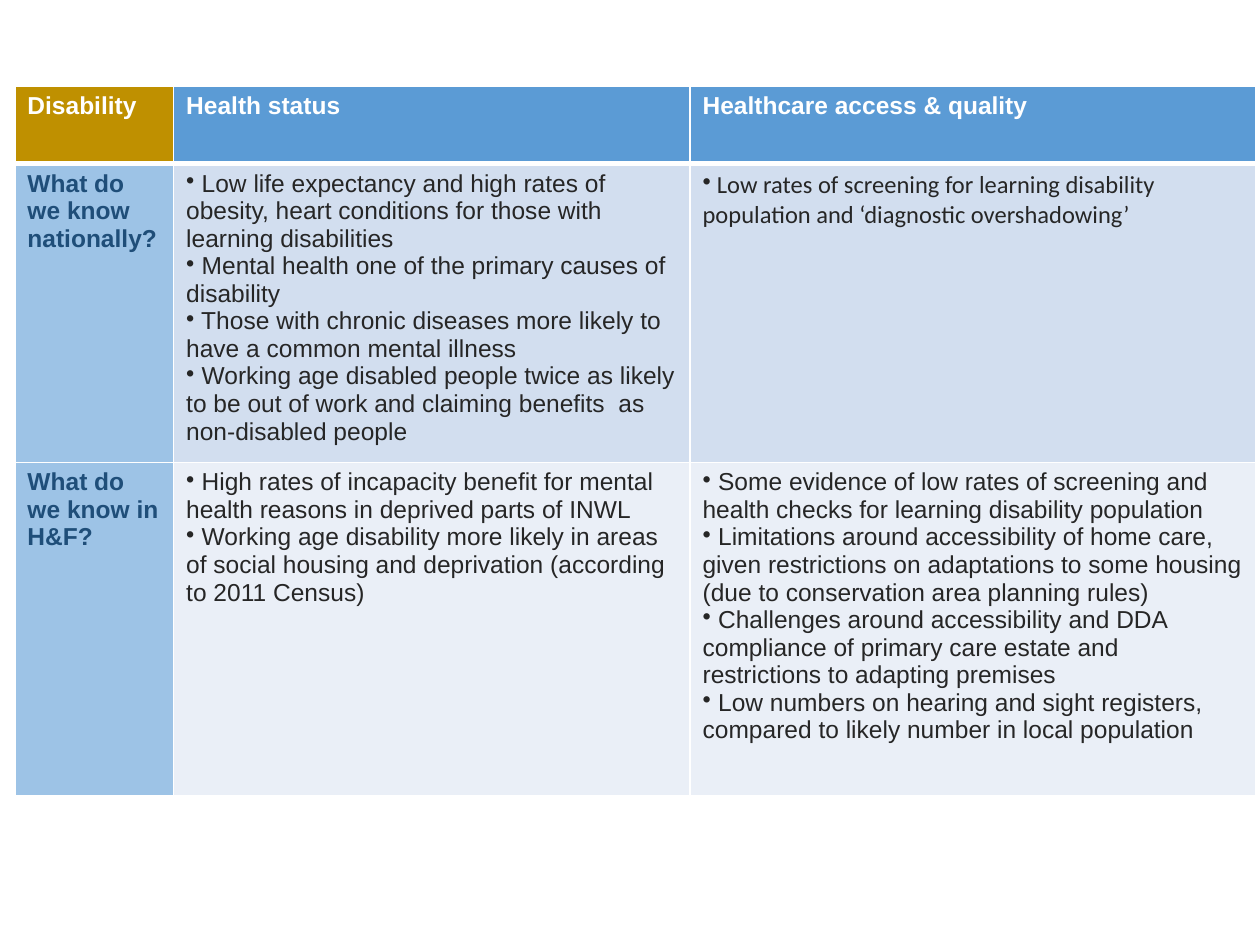
"""Build a slide with a table of what is known about disability and health."""
from dataclasses import dataclass

import lxml.etree
import pptx
import pptx.dml.color
import pptx.oxml.ns
import pptx.table
import pptx.util

Cm = pptx.util.Cm
Pt = pptx.util.Pt
qn = pptx.oxml.ns.qn

COLOURS = {
    "white": "FFFFFF",
    "gold": "BF9000",
    "blue": "5B9BD5",
    "sky": "9DC3E6",
    "navy": "1F4E79",
    "charcoal": "262626",
    "national": "D2DEEF",
    "local": "EAEFF7",
}
COLUMN_WIDTHS = (3.2, 10.41, 11.4)
ROW_HEIGHTS = (1.57, 6.02, 6.73)
HEADER_RULE = 3
THIN_RULE = 1


@dataclass(frozen=True)
class Entry:
    paragraphs: tuple[str, ...]
    fill: str
    ink: str = "charcoal"
    bold: bool = False
    bulleted: bool = True
    font: str = "Arial"


def heading(text: str, fill: str, ink: str = "white") -> Entry:
    return Entry((text,), fill, ink, bold=True, bulleted=False)


ROWS = (
    (
        heading("Disability", "gold"),
        heading("Health status", "blue"),
        heading("Healthcare access & quality", "blue"),
    ),
    (
        heading("What do we know nationally?", "sky", "navy"),
        Entry((
            "Low life expectancy and high rates of obesity, heart conditions "
            "for those with learning disabilities",
            "Mental health one of the primary causes of disability",
            "Those with chronic diseases more likely to have a common mental illness",
            "Working age disabled people twice as likely to be out of work "
            "and claiming benefits  as non-disabled people",
        ), "national"),
        Entry((
            "Low rates of screening for learning disability population "
            "and ‘diagnostic overshadowing’",
        ), "national", font="Calibri"),
    ),
    (
        heading("What do we know in H&F?", "sky", "navy"),
        Entry((
            "High rates of incapacity benefit for mental health reasons "
            "in deprived parts of INWL",
            "Working age disability more likely in areas of social housing "
            "and deprivation (according to 2011 Census)",
        ), "local"),
        Entry((
            "Some evidence of low rates of screening and health checks "
            "for learning disability population",
            "Limitations around accessibility of home care, given restrictions on "
            "adaptations to some housing (due to conservation area planning rules)",
            "Challenges around accessibility and DDA compliance of primary care "
            "estate and restrictions to adapting premises",
            "Low numbers on hearing and sight registers, compared to likely "
            "number in local population",
        ), "local"),
    ),
)


def rgb(colour: str) -> pptx.dml.color.RGBColor:
    return pptx.dml.color.RGBColor.from_string(COLOURS[colour])


def set_borders(cell: pptx.table._Cell, top: int, bottom: int) -> None:
    properties = cell._tc.get_or_add_tcPr()
    widths = {"a:lnL": THIN_RULE, "a:lnR": THIN_RULE, "a:lnT": top, "a:lnB": bottom}
    for position, (tag, width) in enumerate(widths.items()):
        line = lxml.etree.Element(qn(tag), w=str(Pt(width)))
        solid = lxml.etree.SubElement(line, qn("a:solidFill"))
        lxml.etree.SubElement(solid, qn("a:srgbClr"), val=COLOURS["white"])
        properties.insert(position, line)


def write_entry(cell: pptx.table._Cell, entry: Entry) -> None:
    cell.fill.solid()
    cell.fill.fore_color.rgb = rgb(entry.fill)
    lead = " " if entry.bulleted else ""
    cell.text = "\n".join(lead + text for text in entry.paragraphs)
    for paragraph in cell.text_frame.paragraphs:
        paragraph.font.name = entry.font
        paragraph.font.size = Pt(14)
        paragraph.font.bold = entry.bold
        paragraph.font.color.rgb = rgb(entry.ink)
        if entry.bulleted:
            properties = paragraph._p.get_or_add_pPr()
            properties.set("marL", "0")
            properties.set("indent", "0")
            bullet = lxml.etree.Element(qn("a:buChar"), char="•")
            properties.insert(0, bullet)


def main() -> None:
    presentation = pptx.Presentation()
    presentation.slide_width = Cm(25.4)
    presentation.slide_height = Cm(19.05)
    slide = presentation.slides.add_slide(presentation.slide_layouts[6])
    table = slide.shapes.add_table(
        len(ROW_HEIGHTS), len(COLUMN_WIDTHS), Cm(0.3), Cm(1.73),
        Cm(sum(COLUMN_WIDTHS)), Cm(sum(ROW_HEIGHTS)),
    ).table
    for column, width in zip(table.columns, COLUMN_WIDTHS):
        column.width = Cm(width)
    for row, height in zip(table.rows, ROW_HEIGHTS):
        row.height = Cm(height)
    for row_index, entries in enumerate(ROWS):
        top = HEADER_RULE if row_index == 1 else THIN_RULE
        bottom = HEADER_RULE if row_index == 0 else THIN_RULE
        for column_index, entry in enumerate(entries):
            cell = table.cell(row_index, column_index)
            write_entry(cell, entry)
            set_borders(cell, top, bottom)
    presentation.save("out.pptx")


if __name__ == "__main__":
    main()
